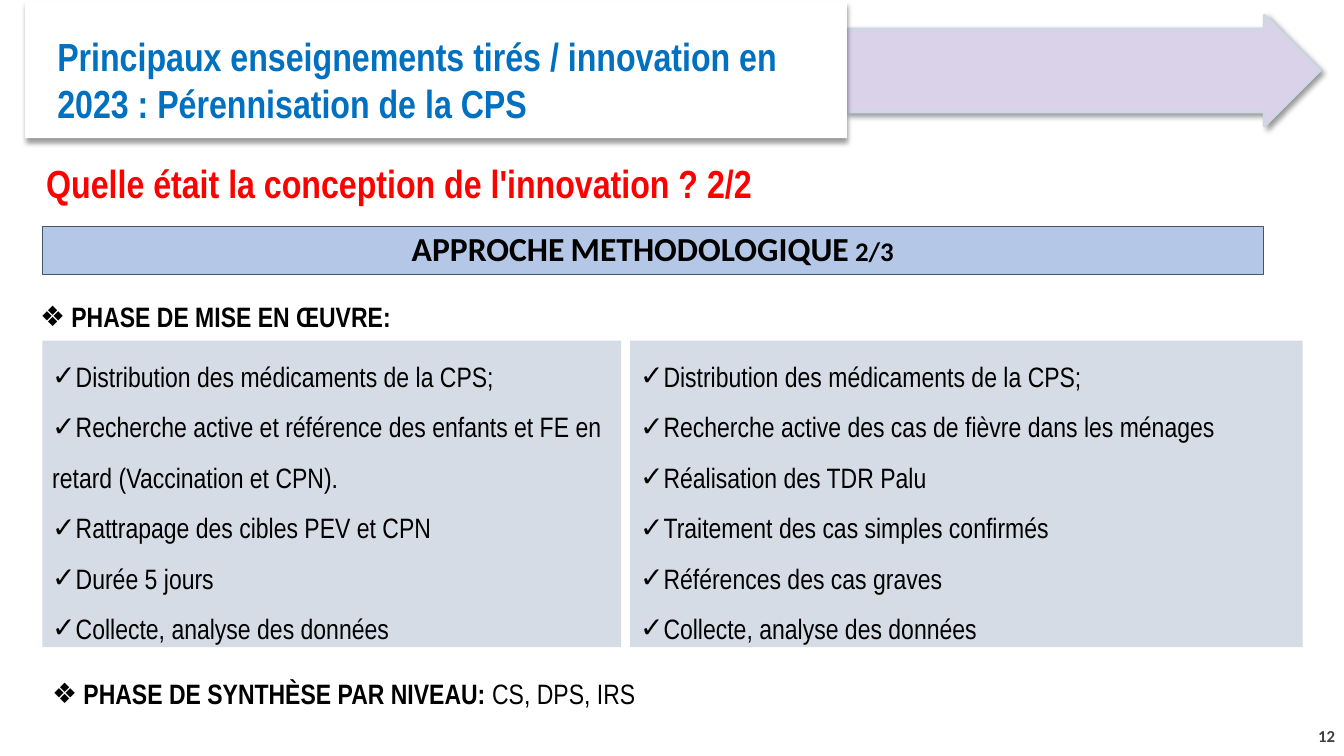
from lxml.etree import SubElement
from pptx import Presentation
from pptx.dml.color import RGBColor
from pptx.enum.shapes import MSO_SHAPE
from pptx.enum.text import MSO_ANCHOR, MSO_AUTO_SIZE, PP_ALIGN
from pptx.oxml.ns import qn
from pptx.util import Emu, Inches, Pt

COLORS = {
    "white": "FFFFFF", "black": "000000", "lilac": "D9D2E9", "lilac_edge": "CFD7E7",
    "blue": "0070C0", "red": "FF0000", "panel": "D6DCE5", "band": "B4C7E7",
    "band_edge": "44546A", "grey": "404040",
}

LEFT_STEPS = [
    "Distribution des médicaments de la CPS;",
    "Recherche active et référence des enfants et FE en retard (Vaccination et CPN).",
    "Rattrapage des cibles PEV et CPN",
    "Durée 5 jours",
    "Collecte, analyse des données",
]
RIGHT_STEPS = [
    "Distribution des médicaments de la CPS;",
    "Recherche active des cas de fièvre dans les ménages",
    "Réalisation des TDR Palu",
    "Traitement des cas simples confirmés",
    "Références des cas graves",
    "Collecte, analyse des données",
]


def color(name):
    return RGBColor.from_string(COLORS[name])


class SlideBuilder:
    font = "Arial Narrow"
    heading_font = "Calibri"

    def __init__(self, page):
        self.page = page

    def paint(self, shape, fill, edge=None, width=0.75):
        shape.fill.solid()
        shape.fill.fore_color.rgb = color(fill)
        if edge:
            shape.line.color.rgb = color(edge)
            shape.line.width = Pt(width)
        else:
            shape.line.fill.background()

    def shape(self, kind, place, fill, edge=None, width=0.75):
        shape = self.page.shapes.add_shape(kind, *map(Inches, place))
        shape.shadow.inherit = False
        self.paint(shape, fill, edge, width)
        return shape

    def cast_shadow(self, shape, angle):
        effects = shape._element.spPr.find(qn("a:effectLst"))
        shadow = SubElement(effects, qn("a:outerShdw"), blurRad=str(Pt(4)), dist=str(Pt(3)),
                            dir=str(angle * 60000), algn="ctr", rotWithShape="0")
        tint = SubElement(shadow, qn("a:srgbClr"), val=COLORS["black"])
        SubElement(tint, qn("a:alpha"), val="40000")

    def style(self, para, size, ink="black", bold=None, font=None):
        para.font.name = font or self.font
        para.font.size = Pt(size)
        para.font.color.rgb = color(ink)
        para.font.bold = bold

    def bullet(self, para, mark, margin, hanging):
        para.line_spacing = 1.5
        properties = para._p.get_or_add_pPr()
        properties.set("marL", str(Inches(margin)))
        properties.set("indent", str(-Inches(hanging)))
        tint = SubElement(properties, qn("a:buClr"))
        SubElement(tint, qn("a:srgbClr"), val=COLORS["black"])
        SubElement(properties, qn("a:buFont"), typeface="Arial")
        SubElement(properties, qn("a:buChar"), char=mark)

    def text_box(self, place, anchor=MSO_ANCHOR.TOP, grow=False):
        """Add a wrapping text box and return its first paragraph."""
        frame = self.page.shapes.add_textbox(*map(Inches, place)).text_frame
        frame.word_wrap = True
        frame.vertical_anchor = anchor
        if grow:
            frame.auto_size = MSO_AUTO_SIZE.SHAPE_TO_FIT_TEXT
        return frame.paragraphs[0]

    def text(self, place, words, size, ink, font=None, anchor=MSO_ANCHOR.TOP, grow=False):
        para = self.text_box(place, anchor, grow)
        para.text = words
        self.style(para, size, ink, True, font)
        return para

    def band_title(self, place, words):
        title = self.page.shapes.title
        title.left, title.top, title.width, title.height = map(Inches, place)
        self.paint(title, "band", "band_edge")
        title.text_frame.vertical_anchor = MSO_ANCHOR.MIDDLE
        para = title.text_frame.paragraphs[0]
        span = para.add_run()
        span.text = words
        span._r.get_or_add_rPr().set("cap", "small")
        para.alignment = PP_ALIGN.CENTER
        para.line_spacing = 0.9
        self.style(para, 24, bold=True, font=self.heading_font)

    def phase(self, place, heading, detail=""):
        para = self.text_box(place, grow=True)
        self.bullet(para, "❖", 0.31, 0.31)
        self.style(para, 20)
        span = para.add_run()
        span.text = heading
        span.font.bold = True
        if detail:
            para.add_run().text = detail

    def steps(self, place, lines):
        panel = self.shape(MSO_SHAPE.RECTANGLE, place, "panel")
        frame = panel.text_frame
        frame.word_wrap = True
        frame.vertical_anchor = MSO_ANCHOR.MIDDLE
        frame.margin_top = frame.margin_bottom = Inches(0.1)
        for index, line in enumerate(lines):
            para = frame.add_paragraph() if index else frame.paragraphs[0]
            para.text = line
            para.alignment = PP_ALIGN.LEFT
            self.bullet(para, "✓", 0, 0.28)
            self.style(para, 20)


def main():
    deck = Presentation()
    deck.slide_width, deck.slide_height = Inches(13.33), Inches(7.5)
    slide = SlideBuilder(deck.slides.add_slide(deck.slide_layouts[5]))

    arrow = slide.shape(MSO_SHAPE.RIGHT_ARROW, (8.4, 0.15, 4.69, 1.1), "lilac", "lilac_edge", 2)
    arrow.adjustments[0] = 0.75
    slide.cast_shadow(arrow, 45)
    card = slide.shape(MSO_SHAPE.RECTANGLE, (0.25, 0.02, 8.15, 1.35), "white")
    slide.cast_shadow(card, 90)

    number = slide.text((12.67, 7.1, 0.67, 0.4), "12", 12, "grey",
                        slide.heading_font, MSO_ANCHOR.MIDDLE)
    number.alignment = PP_ALIGN.RIGHT
    slide.text((0.47, 0.24, 7.77, 1.1),
               "Principaux enseignements tirés / innovation en 2023 : Pérennisation de la CPS",
               28, "blue", anchor=MSO_ANCHOR.MIDDLE)
    slide.text((0.36, 1.53, 10.63, 0.57), "Quelle était la conception de l'innovation ? 2/2",
               28, "red", grow=True)
    slide.band_title((0.42, 2.25, 12.11, 0.47), "APPROCHE METHODOLOGIQUE 2/3")

    slide.phase((0.3, 2.76, 6.67, 0.54), "PHASE DE MISE EN ŒUVRE:")
    slide.steps((0.42, 3.38, 5.74, 3.04), LEFT_STEPS)
    slide.steps((6.25, 3.38, 6.67, 3.04), RIGHT_STEPS)
    slide.phase((0.42, 6.5, 7.87, 0.54), "PHASE DE SYNTHÈSE PAR NIVEAU: ", "CS, DPS, IRS")

    deck.save("out.pptx")


if __name__ == "__main__":
    main()
